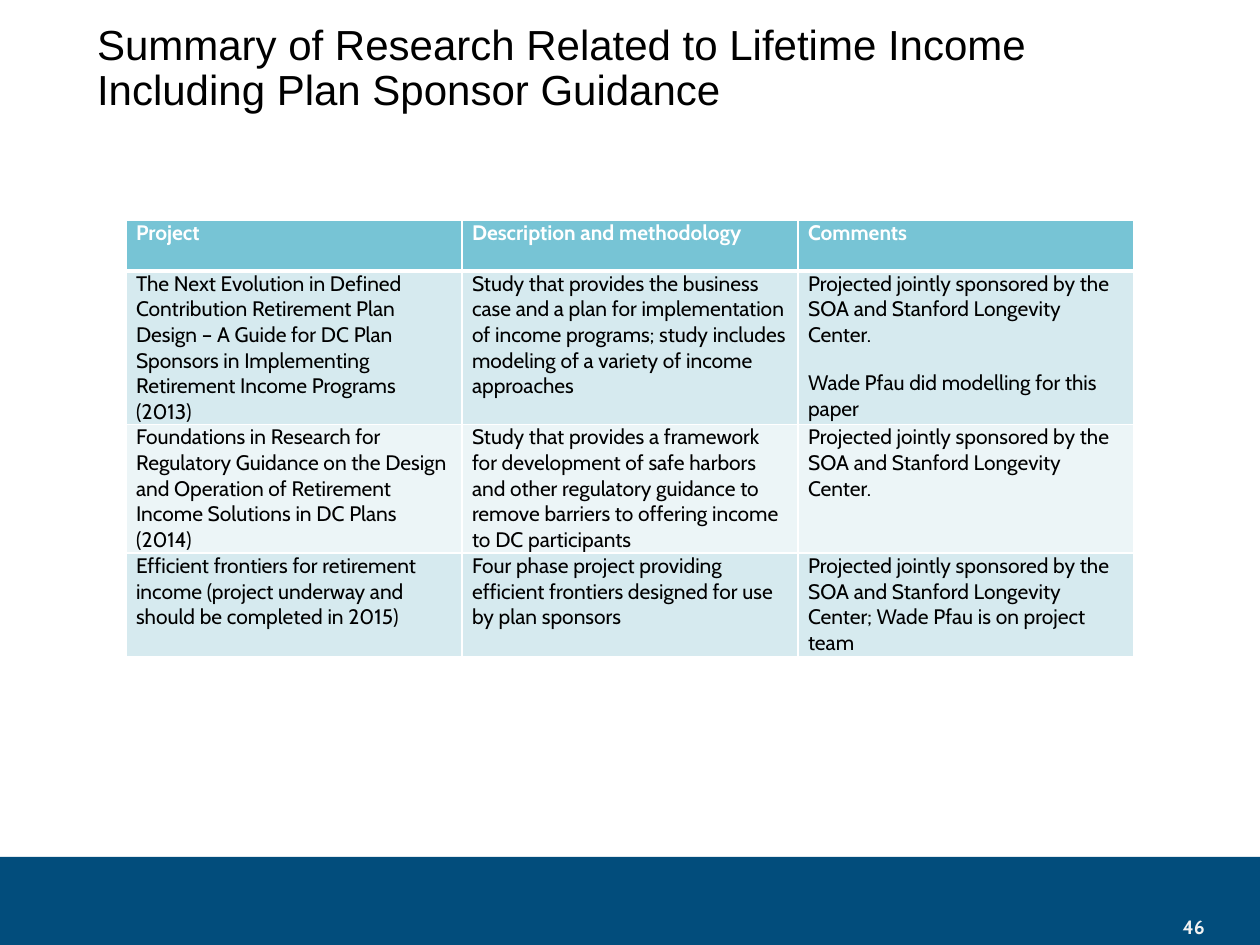
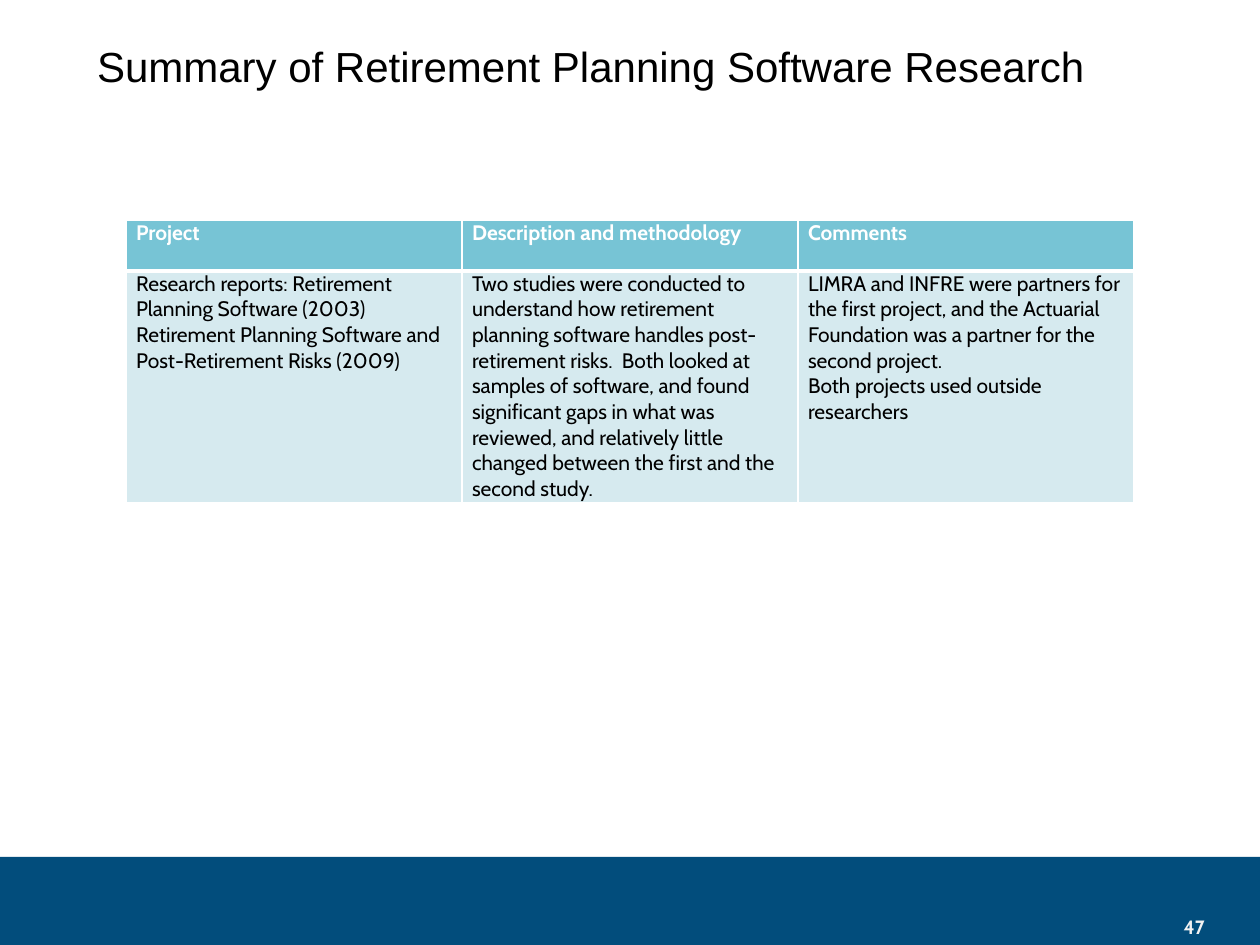
from dataclasses import dataclass

from pptx import Presentation
from pptx.dml.color import RGBColor
from pptx.enum.shapes import MSO_SHAPE as Preset
from pptx.enum.text import MSO_ANCHOR as Anchor
from pptx.enum.text import MSO_AUTO_SIZE as AutoSize
from pptx.enum.text import PP_ALIGN as Align
from pptx.oxml.ns import qn
from pptx.slide import Slide
from pptx.table import _Cell as Cell
from pptx.text.text import TextFrame
from pptx.util import Inches, Pt
from lxml.etree import SubElement

COLORS = {
    "band": "024D7C",
    "number": "F2F2F2",
    "header": "77C4D5",
    "odd_row": "D6EAEF",
    "even_row": "ECF5F7",
    "white": "FFFFFF",
    "black": "000000",
}
TITLE_FONT, BODY_FONT = "Arial", "Cabin"
HEADINGS = ("Project", "Description and methodology", "Comments")
HEADER_HEIGHT = 0.4
TABLE_WIDTH = 8


@dataclass(frozen=True)
class Study:
    """One table row, height in inches; a newline starts a new paragraph."""
    project: str
    description: str
    comments: str
    height: float
    comment_gap: int = 0


@dataclass(frozen=True)
class ResearchPage:
    number: int
    title: str
    studies: tuple[Study, ...]


PAGES = (
    ResearchPage(
        46,
        "Summary of Research Related to Lifetime Income Including Plan Sponsor Guidance",
        (
            Study(
                "The Next Evolution in Defined Contribution Retirement Plan Design – "
                "A Guide for DC Plan Sponsors in Implementing Retirement Income "
                "Programs (2013)",
                "Study that provides the business case and a plan for implementation "
                "of income programs; study includes modeling of a variety of income "
                "approaches",
                "Projected jointly sponsored by the SOA and Stanford Longevity Center.\n"
                "Wade Pfau did modelling for this paper",
                height=1.22,
                comment_gap=13,
            ),
            Study(
                "Foundations in Research for Regulatory Guidance on the Design and "
                "Operation of Retirement Income Solutions in DC Plans (2014)",
                "Study that provides a framework for development of safe harbors and "
                "other regulatory guidance to remove barriers to offering income to "
                "DC participants",
                "Projected jointly sponsored by the SOA and Stanford Longevity Center.",
                height=1.02,
            ),
            Study(
                "Efficient frontiers for retirement income (project underway and "
                "should be completed in 2015)",
                "Four phase project providing efficient frontiers designed for use by "
                "plan sponsors",
                "Projected jointly sponsored by the SOA and Stanford Longevity Center; "
                "Wade Pfau is on project team",
                height=0.82,
            ),
        ),
    ),
    ResearchPage(
        47,
        "Summary of Retirement Planning Software Research",
        (
            Study(
                "Research reports: Retirement Planning Software (2003)\n"
                "Retirement Planning Software and Post-Retirement Risks (2009)",
                "Two studies were conducted to understand how retirement planning "
                "software handles post-retirement risks.  Both looked at samples of "
                "software, and found significant gaps in what was reviewed, and "
                "relatively little changed between the first and the second study.",
                "LIMRA and INFRE were partners for the first project, and the "
                "Actuarial Foundation was a partner for the second project.\n"
                "Both projects used outside researchers",
                height=1.84,
            ),
        ),
    ),
)


def color(name: str) -> RGBColor:
    return RGBColor.from_string(COLORS[name])


def style_text(frame: TextFrame, font: str, size: int, tint: str,
               bold: bool = False, align: Align = Align.LEFT) -> None:
    for para in frame.paragraphs:
        para.alignment = align
        for span in para.runs:
            span.font.name = font
            span.font.size = Pt(size)
            span.font.bold = bold
            span.font.color.rgb = color(tint)


# Shared frame: title, bottom band and page number
def add_title(page: Slide, text: str) -> None:
    title = page.shapes.title
    title.left, title.top = Inches(0.67), Inches(0.1)
    title.width, title.height = Inches(8.83), Inches(0.9)
    frame = title.text_frame
    frame.text = text
    frame.auto_size = AutoSize.NONE
    frame.vertical_anchor = Anchor.MIDDLE
    frame.paragraphs[0].line_spacing = 0.9
    style_text(frame, TITLE_FONT, 24, "black")


def add_footer(page: Slide, number: int) -> None:
    band = page.shapes.add_shape(
        Preset.RECTANGLE, Inches(0), Inches(6.8), Inches(10), Inches(0.7))
    band.shadow.inherit = False
    band.fill.solid()
    band.fill.fore_color.rgb = color("band")
    band.line.fill.background()

    box = page.shapes.add_textbox(
        Inches(7.33), Inches(7.17), Inches(2.33), Inches(0.33))
    frame = box.text_frame
    frame.word_wrap = True
    frame.vertical_anchor = Anchor.BOTTOM
    frame.text = str(number)
    style_text(frame, BODY_FONT, 11, "number", bold=True, align=Align.RIGHT)


# Research table
def set_borders(cell: Cell, top: int, bottom: int) -> None:
    properties = cell._tc.get_or_add_tcPr()
    for side, width in (("L", 1), ("R", 1), ("T", top), ("B", bottom)):
        line = SubElement(properties, qn(f"a:ln{side}"), w=str(Pt(width)))
        fill = SubElement(line, qn("a:solidFill"))
        SubElement(fill, qn("a:srgbClr"), val=COLORS["white"])


def fill_cell(cell: Cell, text: str, row: int) -> None:
    is_header = row == 0
    set_borders(cell, top=3 if row == 1 else 1, bottom=3 if is_header else 1)
    background = "header" if is_header else "odd_row" if row % 2 else "even_row"
    cell.fill.solid()
    cell.fill.fore_color.rgb = color(background)
    cell.margin_left = cell.margin_right = Inches(0.08)
    cell.margin_top = cell.margin_bottom = Inches(0)
    cell.text_frame.text = text
    style_text(cell.text_frame, BODY_FONT, 12,
               "white" if is_header else "black", bold=is_header)


def add_research_table(page: Slide, studies: tuple[Study, ...]) -> None:
    heights = [HEADER_HEIGHT] + [study.height for study in studies]
    table = page.shapes.add_table(
        len(heights), len(HEADINGS), Inches(1), Inches(1.75),
        Inches(TABLE_WIDTH), Inches(sum(heights))).table
    table.horz_banding = False
    for column in table.columns:
        column.width = Inches(TABLE_WIDTH / len(HEADINGS))

    texts = [HEADINGS] + [(s.project, s.description, s.comments) for s in studies]
    for row, (height, row_texts) in enumerate(zip(heights, texts)):
        table.rows[row].height = Inches(height)
        for column, text in enumerate(row_texts):
            fill_cell(table.cell(row, column), text, row)

    for row, study in enumerate(studies, start=1):
        for para in table.cell(row, 2).text_frame.paragraphs[1:]:
            para.space_before = Pt(study.comment_gap)


def main() -> None:
    deck = Presentation()
    deck.slide_width, deck.slide_height = Inches(10), Inches(7.5)
    title_only = deck.slide_layouts[5]
    for content in PAGES:
        page = deck.slides.add_slide(title_only)
        add_footer(page, content.number)
        add_title(page, content.title)
        add_research_table(page, content.studies)
    deck.save("out.pptx")


if __name__ == "__main__":
    main()
